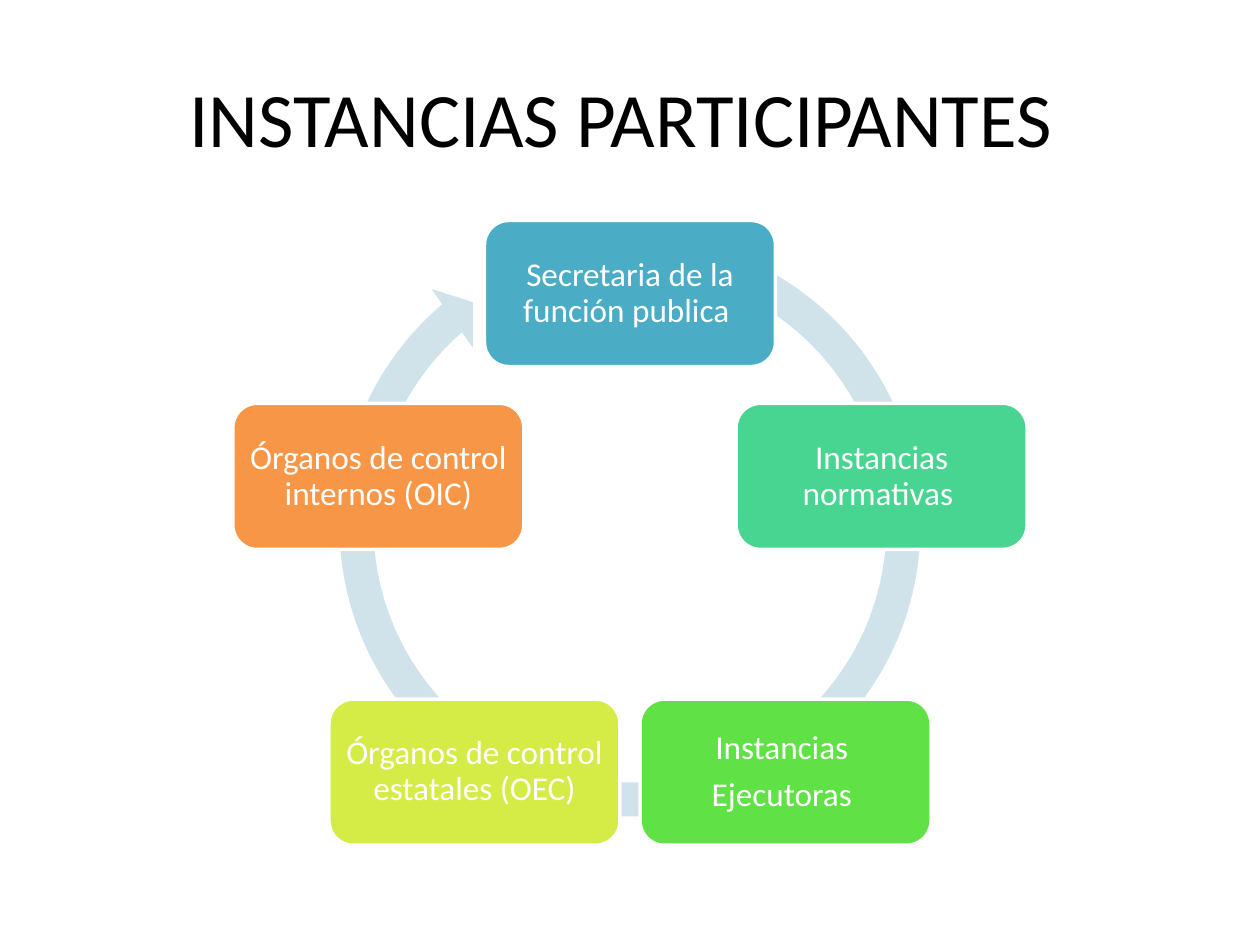
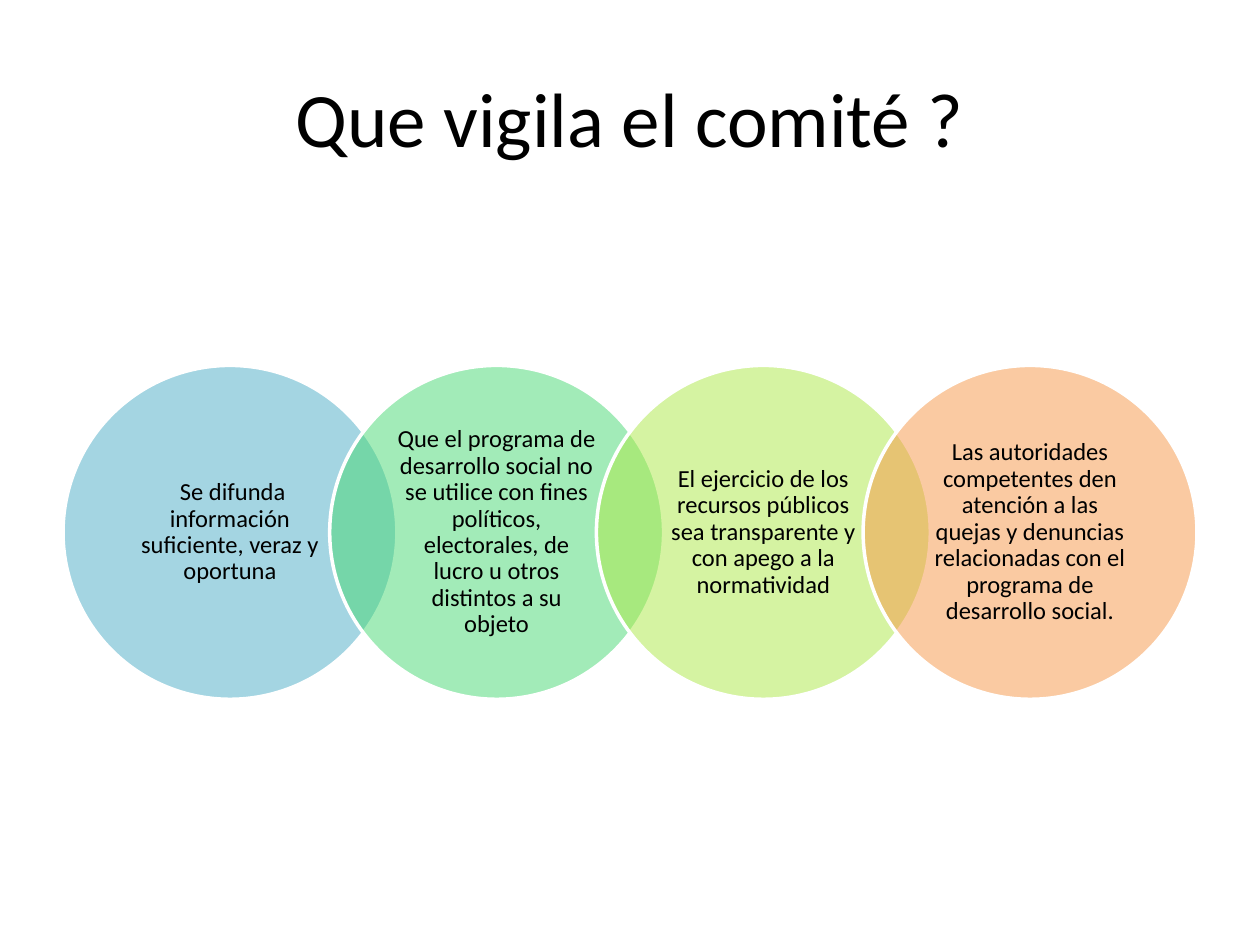
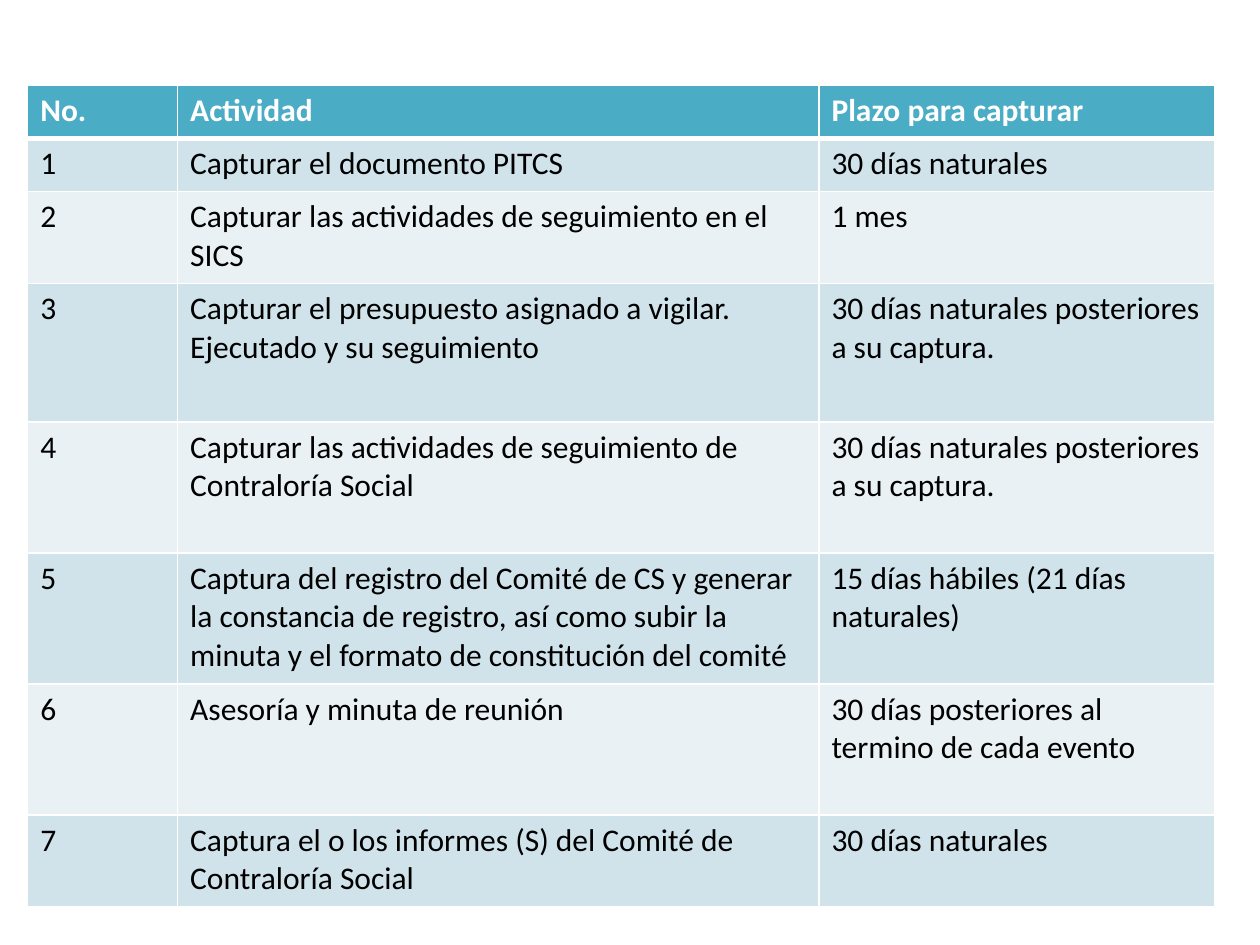
from dataclasses import dataclass
from math import cos, radians, sin

from lxml.etree import SubElement
from pptx import Presentation
from pptx.dml.color import RGBColor
from pptx.enum.shapes import MSO_SHAPE
from pptx.enum.text import MSO_ANCHOR, PP_ALIGN
from pptx.oxml.ns import qn
from pptx.util import Inches, Pt


@dataclass(frozen=True)
class Theme:
    font: str = "Calibri"
    black: str = "000000"
    white: str = "FFFFFF"
    teal: str = "4BACC6"
    orange: str = "F79646"
    pale: str = "D0E3EA"
    paler: str = "E9F1F5"
    title_size: int = 44
    box_size: int = 19
    circle_size: int = 14
    table_size: int = 18
    outline: int = 2


THEME = Theme()

# The slide is a grid of 100 columns by 75 rows of square units
COLUMNS, ROWS = 100, 75
UNIT = Inches(0.1)
TITLE_ONLY, BLANK = 5, 6

PARTICIPANTS = [
    (["Secretaria de la función publica "], THEME.teal),
    (["Instancias normativas "], "48D491"),
    (["Instancias ", "Ejecutoras "], "60E146"),
    (["Órganos de control estatales (OEC)"], "D5EC46"),
    (["Órganos de control internos (OIC)"], THEME.orange),
]

WATCHED_TOPICS = [
    (" Se difunda información suficiente, veraz y oportuna", THEME.teal),
    ("Que el programa de desarrollo social no se utilice con fines políticos, "
     "electorales, de lucro u otros distintos a su objeto", "47D872"),
    ("El ejercicio de los recursos públicos sea transparente y con apego a la "
     "normatividad", "ACE946"),
    ("Las autoridades competentes den atención a las quejas y denuncias "
     "relacionadas con el programa de desarrollo social.", THEME.orange),
]

DEADLINE_HEADER = ("No.", "Actividad", "Plazo para capturar")
DEADLINES = [
    ("Capturar el documento PITCS", "30 días naturales"),
    ("Capturar las actividades de seguimiento en el SICS", "1 mes"),
    ("Capturar el presupuesto asignado a vigilar. Ejecutado y su seguimiento",
     "30 días naturales posteriores a su captura."),
    ("Capturar las actividades de seguimiento de Contraloría Social",
     "30 días naturales posteriores a su captura."),
    ("Captura del registro del Comité de CS y generar la constancia de registro, "
     "así como subir la minuta y el formato de constitución del comité",
     "15 días hábiles (21 días naturales)"),
    ("Asesoría y minuta de reunión", "30 días posteriores al termino de cada evento"),
    ("Captura el o los informes (S) del Comité de Contraloría Social",
     "30 días naturales"),
]
DEADLINE_COLUMNS = (11.9, 50.9, 31.4)
DEADLINE_ROWS = (4.2, 4.2, 7.3, 11, 10.4, 10.4, 10.4, 7.3)


# Shared helpers
def grid(*lengths):
    return [round(length * UNIT) for length in lengths]


def apply_format(target, values):
    for name, value in values.items():
        setattr(target, name, value)


def format_font(font, size, color, bold=False):
    apply_format(font, {"name": THEME.font, "size": Pt(size), "bold": bold})
    font.color.rgb = RGBColor.from_string(color)


def add_titled_slide(presentation, text):
    slide = presentation.slides.add_slide(presentation.slide_layouts[TITLE_ONLY])
    title = slide.shapes.title
    left, top, width, height = grid(5, 3, COLUMNS - 10, 12.5)
    apply_format(title, {"left": left, "top": top, "width": width, "height": height})
    title.text_frame.text = text
    title.text_frame.vertical_anchor = MSO_ANCHOR.MIDDLE
    paragraph = title.text_frame.paragraphs[0]
    paragraph.alignment = PP_ALIGN.CENTER
    format_font(paragraph.runs[0].font, THEME.title_size, THEME.black)
    return slide


def add_filled_shape(slide, kind, box, color, outlined=True):
    shape = slide.shapes.add_shape(kind, *grid(*box))
    shape.shadow.inherit = False
    shape.fill.solid()
    shape.fill.fore_color.rgb = RGBColor.from_string(color)
    if outlined:
        shape.line.color.rgb = RGBColor.from_string(THEME.white)
        shape.line.width = Pt(THEME.outline)
    else:
        shape.line.fill.background()
    return shape


def write_centred(shape, texts, size, color, side_margin, end_margin):
    side, end = grid(side_margin, end_margin)
    frame = shape.text_frame
    apply_format(frame, {
        "word_wrap": True, "vertical_anchor": MSO_ANCHOR.MIDDLE,
        "margin_left": side, "margin_right": side,
        "margin_top": end, "margin_bottom": end,
    })
    frame.text = "\n".join(texts)
    for paragraph in frame.paragraphs:
        apply_format(paragraph, {
            "alignment": PP_ALIGN.CENTER, "line_spacing": 0.9,
            "space_after": Pt(size * 0.35),
        })
        format_font(paragraph.runs[0].font, size, color)


def set_opacity(shape, percent):
    color = shape._element.spPr.find(qn("a:solidFill"))[0]
    SubElement(color, qn("a:alpha")).set("val", str(percent * 1000))


def set_cell_borders(cell, bottom_width):
    properties = cell._tc.get_or_add_tcPr()
    for side, width in (("L", 1), ("R", 1), ("T", 1), ("B", bottom_width)):
        line = SubElement(properties, qn(f"a:ln{side}"), w=str(Pt(width)))
        fill = SubElement(line, qn("a:solidFill"))
        SubElement(fill, qn("a:srgbClr"), val=THEME.white)


# Content elements
def add_cycle(slide, center_x, center_y, radius):
    ring_size = 49.1
    ring = add_filled_shape(
        slide, MSO_SHAPE.CIRCULAR_ARROW,
        (center_x - ring_size / 2, 17.2, ring_size, ring_size),
        THEME.pale, outlined=False)
    # Band and head sizes are shares; the angles are in degrees
    head_angle, end_angle, start_angle = (
        degrees * 0.6 for degrees in (5.51, 229.43, 289.87))
    values = (0.055, head_angle, end_angle, start_angle, 0.058)
    for index, value in enumerate(values):
        ring.adjustments[index] = value

    width, height = 23.1, 11.6
    for index, (texts, color) in enumerate(PARTICIPANTS):
        angle = radians(index * 360 / len(PARTICIPANTS))
        left = center_x + radius * sin(angle) - width / 2
        top = center_y - radius * cos(angle) - height / 2
        box = add_filled_shape(slide, MSO_SHAPE.ROUNDED_RECTANGLE,
                               (left, top, width, height), color)
        write_centred(box, texts, THEME.box_size, THEME.white, 0.8, 0.8)


def add_circle_chain(slide, margin, top, diameter):
    step = (COLUMNS - 2 * margin - diameter) / (len(WATCHED_TOPICS) - 1)
    for index, (text, color) in enumerate(WATCHED_TOPICS):
        circle = add_filled_shape(
            slide, MSO_SHAPE.OVAL,
            (margin + index * step, top, diameter, diameter), color)
        set_opacity(circle, 50)
        write_centred(circle, [text], THEME.circle_size, THEME.black, 1.5, 0.2)


def add_deadline_table(slide, left, top):
    rows = [DEADLINE_HEADER]
    rows += [(str(number), *row) for number, row in enumerate(DEADLINES, 1)]
    table = slide.shapes.add_table(
        len(rows), len(DEADLINE_COLUMNS),
        *grid(left, top, sum(DEADLINE_COLUMNS), sum(DEADLINE_ROWS))).table
    for column, width in zip(table.columns, grid(*DEADLINE_COLUMNS)):
        column.width = width
    for row, height in zip(table.rows, grid(*DEADLINE_ROWS)):
        row.height = height

    for row_index, texts in enumerate(rows):
        is_header = row_index == 0
        band = THEME.pale if row_index % 2 else THEME.paler
        for column_index, text in enumerate(texts):
            cell = table.cell(row_index, column_index)
            set_cell_borders(cell, 3 if is_header else 1)
            cell.fill.solid()
            cell.fill.fore_color.rgb = RGBColor.from_string(
                THEME.teal if is_header else band)
            cell.text = text
            format_font(cell.text_frame.paragraphs[0].runs[0].font, THEME.table_size,
                        THEME.white if is_header else THEME.black, is_header)


def main():
    presentation = Presentation()
    presentation.slide_width, presentation.slide_height = grid(COLUMNS, ROWS)

    # Participants
    slide = add_titled_slide(presentation, "INSTANCIAS PARTICIPANTES ")
    add_cycle(slide, center_x=50, center_y=44.3, radius=21)

    # What the committee watches
    slide = add_titled_slide(presentation, "Que vigila el comité ?")
    add_circle_chain(slide, margin=5, top=29, diameter=26.5)

    # Deadlines
    slide = presentation.slides.add_slide(presentation.slide_layouts[BLANK])
    add_deadline_table(slide, left=2.2, top=6.8)

    presentation.save("out.pptx")


if __name__ == "__main__":
    main()
